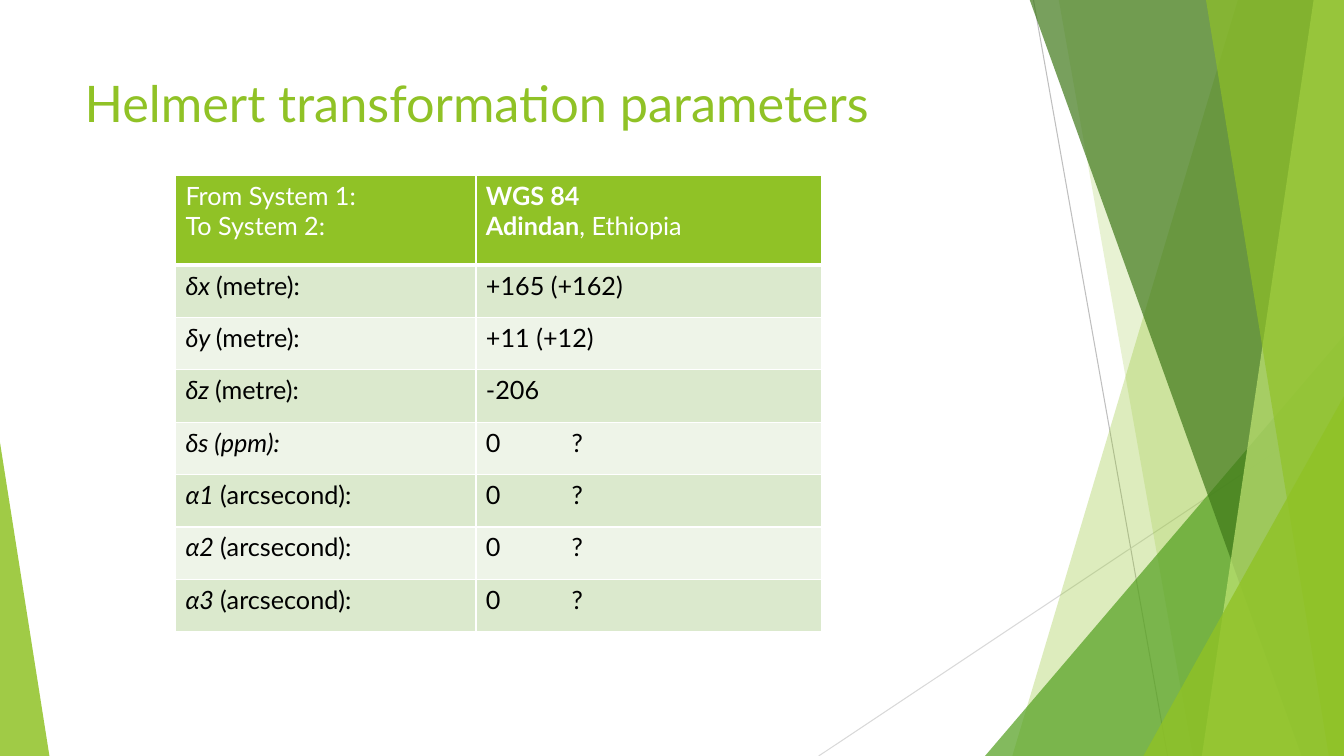
"""Builds a slide with a table of Helmert transformation parameters."""
from lxml import etree
from pptx import Presentation
from pptx.dml.color import RGBColor
from pptx.enum.shapes import MSO_CONNECTOR, MSO_SHAPE
from pptx.enum.text import MSO_ANCHOR, PP_ALIGN
from pptx.oxml.ns import qn
from pptx.util import Inches, Pt

STRAIGHT = MSO_CONNECTOR.STRAIGHT
TRIANGLE = MSO_SHAPE.ISOSCELES_TRIANGLE
TOP = MSO_ANCHOR.TOP
LEFT = PP_ALIGN.LEFT

WHITE = RGBColor(0xFF, 0xFF, 0xFF)
BLACK = RGBColor(0x00, 0x00, 0x00)
LIME = RGBColor(0x90, 0xC2, 0x26)
PALE_LIME = RGBColor(0xC0, 0xE4, 0x74)
GREEN = RGBColor(0x54, 0xA0, 0x21)
DARK_GREEN = RGBColor(0x3F, 0x78, 0x19)
BAND_DARK = RGBColor(0xDB, 0xE9, 0xCD)
BAND_LIGHT = RGBColor(0xEE, 0xF4, 0xE8)
GREY = RGBColor(0xBF, 0xBF, 0xBF)
LIGHT_GREY = RGBColor(0xD9, 0xD9, 0xD9)

WIDTH, HEIGHT = 13.33, 7.5
UNKNOWN = [[("0\t?", "")]]
PARAMETERS = [
    ("δx ", "(metre):", [[("+165 (+162)", "")]]),
    ("δy ", "(metre):", [[("+11 (+12)", "")]]),
    ("δz ", "(metre):", [[("-206", "")]]),
    ("δs (ppm):", "", UNKNOWN),
    ("α1 ", "(arcsecond):", UNKNOWN),
    ("α2 ", "(arcsecond):", UNKNOWN),
    ("α3 ", "(arcsecond):", UNKNOWN),
]


class SlideBuilder:
    """Holds the font and the current slide, and draws each kind of element."""

    font_name = "Lato"

    def __init__(self, slide):
        self.slide = slide
        self.shapes = slide.shapes

    def style(self, font, size, color):
        font.name, font.size = self.font_name, Pt(size)
        font.color.rgb = color

    def paint(self, shape, color, opacity):
        shape.shadow.inherit = False
        shape.fill.solid()
        shape.fill.fore_color.rgb = color
        shape.line.fill.background()
        tint = shape.element.spPr.find(qn("a:solidFill"))[0]
        etree.SubElement(tint, qn("a:alpha"), val=str(opacity * 1000))

    def line(self, start, end, color):
        ends = [Inches(value) for value in (*start, *end)]
        connector = self.shapes.add_connector(STRAIGHT, *ends)
        connector.line.color.rgb = color
        connector.line.width = Pt(0.75)
        etree.SubElement(connector.element.spPr, qn("a:effectLst"))

    def ribbon(self, top_x, bottom_x, color, opacity):
        corners = [(top_x, -0.01), (WIDTH, -0.01), (WIDTH, HEIGHT), (bottom_x, HEIGHT)]
        points = [(Inches(x), Inches(y)) for x, y in corners]
        outline = self.shapes.build_freeform(*points[0])
        outline.add_line_segments(points[1:], close=True)
        self.paint(outline.convert_to_shape(), color, opacity)

    def triangle(self, left, width, height, apex, color, opacity):
        facet = self.shapes.add_shape(
            TRIANGLE, Inches(left), Inches(HEIGHT - height), Inches(width), Inches(height))
        facet.adjustments[0] = apex
        self.paint(facet, color, opacity)

    def title(self, text):
        title = self.shapes.title
        title.left, title.top = Inches(0.74), Inches(0.67)
        title.width, title.height = Inches(9.4), Inches(1.44)
        frame = title.text_frame
        frame.text = text
        frame.vertical_anchor = TOP
        paragraph = frame.paragraphs[0]
        paragraph.alignment = LEFT
        self.style(paragraph.font, 36, LIME)
        self.slide.shapes.element.append(title.element)

    def borders(self, cell, bottom):
        properties = cell._tc.get_or_add_tcPr()
        for side, points in (("L", 1), ("R", 1), ("T", 1), ("B", bottom)):
            edge = etree.SubElement(properties, qn(f"a:ln{side}"), w=str(Pt(points)))
            fill = etree.SubElement(edge, qn("a:solidFill"))
            etree.SubElement(fill, qn("a:srgbClr"), val=str(WHITE))

    def cell(self, cell, lines, fill, color, bottom=1):
        self.borders(cell, bottom)
        cell.fill.solid()
        cell.fill.fore_color.rgb = fill
        frame = cell.text_frame
        for index, pieces in enumerate(lines):
            paragraph = frame.add_paragraph() if index else frame.paragraphs[0]
            self.style(paragraph.font, 18, color)
            for text, emphasis in pieces:
                run = paragraph.add_run()
                run.text = text
                run.font.bold = emphasis == "bold"
                run.font.italic = emphasis == "italic"
                if "\t" in text:
                    self.tab_stop(paragraph, 0.85)

    def tab_stop(self, paragraph, position):
        stops = etree.Element(qn("a:tabLst"))
        etree.SubElement(stops, qn("a:tab"), pos=str(Inches(position)), algn="l")
        paragraph._p.get_or_add_pPr().insert(0, stops)

    def table(self, header, parameters):
        table = self.shapes.add_table(
            len(parameters) + 1, 2, Inches(1.74), Inches(1.74), Inches(6.41), Inches(4.5)).table
        for column, width in zip(table.columns, (2.98, 3.43)):
            column.width = Inches(width)
        for index, row in enumerate(table.rows):
            row.height = Inches(0.52 if index else 0.89)
        for column, lines in enumerate(header):
            self.cell(table.cell(0, column), lines, LIME, WHITE, bottom=3)
        for index, (symbol, unit, value) in enumerate(parameters, 1):
            band = BAND_DARK if index % 2 else BAND_LIGHT
            label = [(symbol, "italic")] + ([(unit, "")] if unit else [])
            self.cell(table.cell(index, 0), [label], band, BLACK)
            self.cell(table.cell(index, 1), value, band, BLACK)


def main():
    deck = Presentation()
    deck.slide_width, deck.slide_height = Inches(WIDTH), Inches(HEIGHT)
    builder = SlideBuilder(deck.slides.add_slide(deck.slide_layouts[5]))

    builder.line((10.25, 0), (11.58, HEIGHT), GREY)
    builder.line((WIDTH, 4.03), (8.12, HEIGHT), LIGHT_GREY)
    builder.ribbon(12.28, 10.04, LIME, 30)
    builder.ribbon(10.5, 11.83, LIME, 20)
    builder.triangle(9.77, 3.56, 4.17, 1, GREEN, 72)
    builder.ribbon(10.21, 12.91, DARK_GREEN, 70)
    builder.ribbon(13.03, 11.92, PALE_LIME, 70)
    builder.ribbon(11.96, 13.18, LIME, 65)
    builder.triangle(11.34, 1.99, 3.57, 1, LIME, 80)
    builder.triangle(0, 0.49, 3.11, 0, LIME, 85)

    builder.title("Helmert transformation parameters")
    header = [
        [[("From System 1:", "")], [("To System 2:", "")]],
        [[("WGS 84", "bold")], [("Adindan", "bold"), (", Ethiopia", "")]],
    ]
    builder.table(header, PARAMETERS)
    deck.save("out.pptx")


if __name__ == "__main__":
    main()
